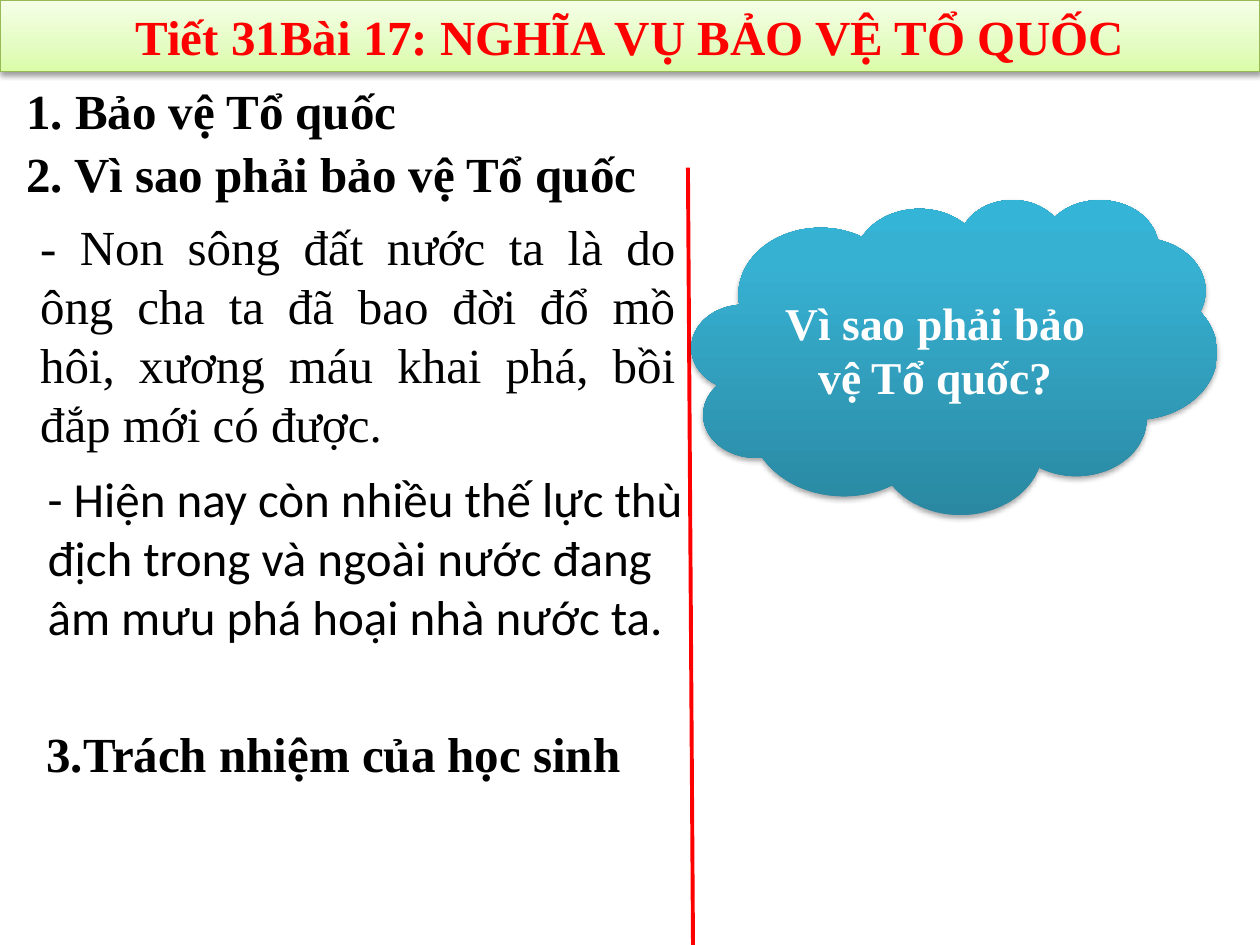
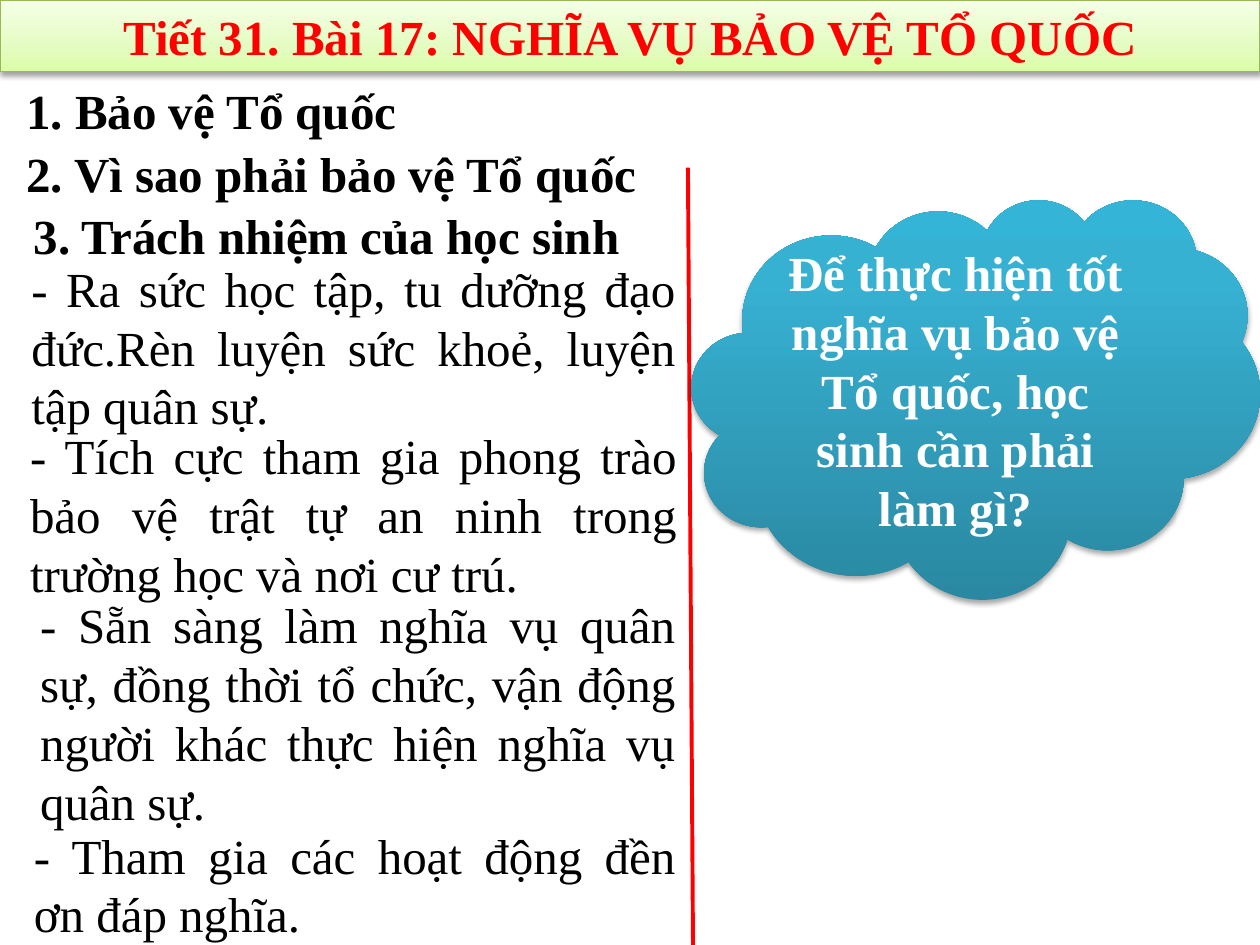
from dataclasses import dataclass

import pptx
import pptx.util
from lxml import etree
from pptx.dml.color import RGBColor
from pptx.enum.shapes import MSO_CONNECTOR, MSO_SHAPE
from pptx.enum.text import MSO_ANCHOR, MSO_AUTO_SIZE, PP_ALIGN
from pptx.oxml.ns import qn
from pptx.util import Inches


# Theme shared by both slides
@dataclass(frozen=True)
class Theme:
    serif: str = "Times New Roman"
    sans: str = "Calibri"
    size: int = 28
    small: int = 26
    black: str = "000000"
    white: str = "FFFFFF"
    red: str = "FF0000"
    band_line: str = "98B955"
    band: tuple = ((0, "DAFDA7"), (35, "E4FCC2"), (100, "F5FFE7"))
    cloud: tuple = ((0, "2A88A2"), (80, "37B1D2"), (100, "34B4D6"))


T = Theme()


@dataclass(frozen=True)
class Box:
    text: str
    left: float
    top: float
    width: float
    height: float
    bold: bool = False
    align: PP_ALIGN = PP_ALIGN.LEFT
    font: str = T.serif


@dataclass(frozen=True)
class Cloud:
    text: str
    width: float
    height: float
    size: int = T.size


@dataclass(frozen=True)
class Lesson:
    title: str
    cloud: Cloud
    boxes: tuple[Box, ...]


def heading(text: str, left: float, top: float, width: float = 5.23) -> Box:
    return Box(text, left, top, width, 0.57, bold=True)


def point(text: str, left: float, top: float, width: float, height: float) -> Box:
    return Box(text, left, top, width, height, align=PP_ALIGN.JUSTIFY)


# Content
SHARED = (
    heading("1. Bảo vệ Tổ quốc", 0.11, 0.59, 3.2),
    heading("2. Vì sao phải bảo vệ Tổ quốc", 0.11, 1.09),
)

LESSONS = (
    Lesson(
        "Tiết 31Bài 17: NGHĨA VỤ BẢO VỆ TỔ QUỐC",
        Cloud("Vì sao phải bảo vệ Tổ quốc?", 4.17, 2.5, T.small),
        (
            point("- Non sông đất nước ta là do ông cha ta đã bao đời đổ mồ hôi, "
                  "xương máu khai phá, bồi đắp mới có được.", 0.22, 1.67, 5.24, 1.99),
            Box("- Hiện nay còn nhiều thế lực thù địch trong và ngoài nước đang "
                "âm mưu phá hoại nhà nước ta.", 0.28, 3.67, 5.24, 1.51, font=T.sans),
            heading("3.Trách nhiệm của học sinh", 0.27, 5.69),
        ),
    ),
    Lesson(
        "Tiết 31. Bài 17: NGHĨA VỤ BẢO VỆ TỔ QUỐC",
        Cloud("Để thực hiện tốt nghĩa vụ bảo vệ Tổ quốc, học sinh cần phải làm gì?",
              4.51, 3.17),
        (
            heading("3. Trách nhiệm của học sinh", 0.17, 1.58),
            point("- Ra sức học tập, tu dưỡng đạo đức.Rèn luyện sức khoẻ, luyện tập "
                  "quân sự.", 0.15, 2, 5.31, 1.51),
            point("- Tích cực tham gia phong trào bảo vệ trật tự an ninh trong trường "
                  "học và nơi cư trú.", 0.14, 3.33, 5.33, 1.51),
            point("- Sẵn sàng làm nghĩa vụ quân sự, đồng thời tổ chức, vận động người "
                  "khác thực hiện nghĩa vụ quân sự.", 0.22, 4.67, 5.24, 1.99),
            point("- Tham gia các hoạt động đền ơn đáp nghĩa.", 0.17, 6.5, 5.29, 1.04),
        ),
    ),
)


# Drawing helpers
def write(sp, text: str, color: str, size: int = T.size, bold: bool = True,
          align: PP_ALIGN = PP_ALIGN.CENTER, font: str = T.serif) -> None:
    tf = sp.text_frame
    tf.word_wrap = True
    p = tf.paragraphs[0]
    p.text = text
    p.alignment = align
    p.font.name = font
    p.font.size = pptx.util.Pt(size)
    p.font.bold = bold
    p.font.color.rgb = RGBColor.from_string(color)


def add_color(parent, color: str):
    return etree.SubElement(parent, qn("a:srgbClr"), val=color)


def add_gradient(sp, stops: tuple) -> None:
    """Fill from bottom to top with (percent, colour) stops."""
    sp.fill.gradient()
    sp.fill.gradient_angle = 90
    gs_list = sp._element.spPr.find(qn("a:gradFill")).find(qn("a:gsLst"))
    for gs in list(gs_list):
        gs_list.remove(gs)
    for percent, color in stops:
        add_color(etree.SubElement(gs_list, qn("a:gs"), pos=str(percent * 1000)), color)


def add_shadow(sp, distance: float, opacity: int) -> None:
    sp.shadow.inherit = False
    effects = sp._element.spPr.find(qn("a:effectLst"))
    shadow = etree.SubElement(
        effects, qn("a:outerShdw"), blurRad=str(pptx.util.Pt(3.1)),
        dist=str(pptx.util.Pt(distance)), dir="5400000", rotWithShape="0")
    etree.SubElement(add_color(shadow, T.black), qn("a:alpha"), val=str(opacity * 1000))


def add_band(s, title: str) -> None:
    sp = s.shapes.add_shape(MSO_SHAPE.RECTANGLE, 0, 0, Inches(10), Inches(0.57))
    add_gradient(sp, T.band)
    sp.line.color.rgb = RGBColor.from_string(T.band_line)
    sp.line.width = pptx.util.Pt(0.75)
    add_shadow(sp, 1.6, 38)
    write(sp, title, T.red)


def add_divider(s) -> None:
    line = s.shapes.add_connector(MSO_CONNECTOR.STRAIGHT, Inches(5.46), Inches(1.33),
                                  Inches(5.5), Inches(7.5))
    line.line.color.rgb = RGBColor.from_string(T.red)
    line.line.width = pptx.util.Pt(2.25)
    etree.SubElement(line._element.spPr, qn("a:effectLst"))


def add_cloud(s, cloud: Cloud) -> None:
    sp = s.shapes.add_shape(MSO_SHAPE.CLOUD, Inches(5.49), Inches(1.58),
                            Inches(cloud.width), Inches(cloud.height))
    add_gradient(sp, T.cloud)
    sp.line.fill.background()
    add_shadow(sp, 1.8, 35)
    sp.text_frame.vertical_anchor = MSO_ANCHOR.MIDDLE
    write(sp, cloud.text, T.white, cloud.size)


def add_box(s, box: Box) -> None:
    sp = s.shapes.add_textbox(Inches(box.left), Inches(box.top),
                              Inches(box.width), Inches(box.height))
    sp.text_frame.auto_size = MSO_AUTO_SIZE.SHAPE_TO_FIT_TEXT
    write(sp, box.text, T.black, bold=box.bold, align=box.align, font=box.font)


def main() -> None:
    prs = pptx.Presentation()
    prs.slide_width, prs.slide_height = Inches(10), Inches(7.5)
    for lesson in LESSONS:
        s = prs.slides.add_slide(prs.slide_layouts[6])
        add_band(s, lesson.title)
        add_divider(s)
        add_cloud(s, lesson.cloud)
        for box in SHARED + lesson.boxes:
            add_box(s, box)
    prs.save("out.pptx")


if __name__ == "__main__":
    main()
